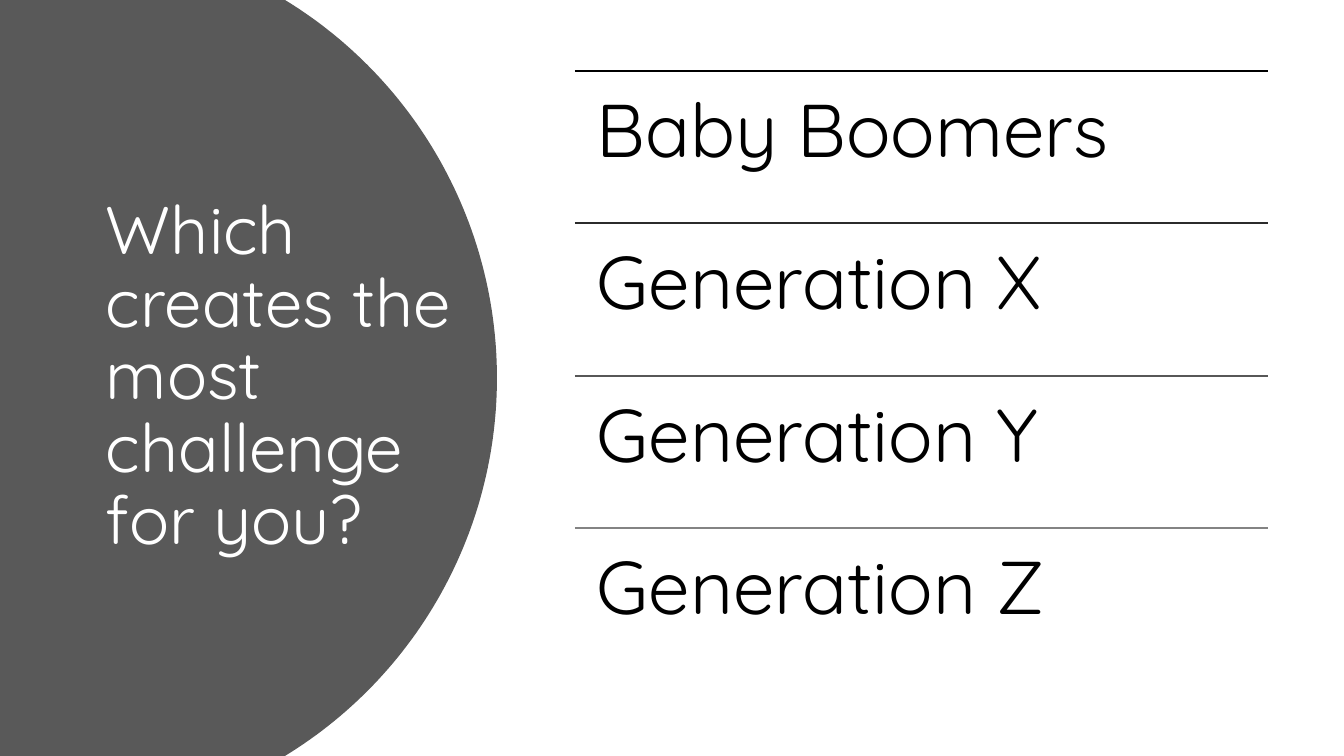
"""Build the slide that asks which generation creates the most challenge."""
from dataclasses import dataclass
from math import asin, cos, sin

from lxml import etree
from pptx import Presentation
from pptx.dml.color import RGBColor
from pptx.enum.shapes import MSO_CONNECTOR
from pptx.enum.text import MSO_ANCHOR, PP_ALIGN
from pptx.oxml.ns import qn
from pptx.slide import Slide
from pptx.util import Emu, Pt

STRAIGHT = MSO_CONNECTOR.STRAIGHT
MIDDLE, TOP = MSO_ANCHOR.MIDDLE, MSO_ANCHOR.TOP
LEFT = PP_ALIGN.LEFT

EMU_PER_PX = 914400 / 100.8
SLIDE_WIDTH, SLIDE_HEIGHT = 1344, 756
ARC_EDGE, ARC_TIP, ARC_STEPS = 285, 497, 120
ROWS_LEFT, ROWS_TOP, ROWS_WIDTH, ROWS_HEIGHT = 575, 71, 693, 610


@dataclass(frozen=True)
class Theme:
    font: str = "Quicksand"
    panel: str = "595959"
    question: str = "FFFFFF"
    answer: str = "000000"
    question_size: float = 48
    answer_size: float = 53.3
    rule_width: float = 1.5
    line_spacing: float = 0.9


@dataclass(frozen=True)
class TextBlock:
    text: str
    left: int
    top: int
    width: int
    height: int
    inset_x: int
    inset_y: int
    size: float
    color: str
    anchor: MSO_ANCHOR


@dataclass(frozen=True)
class Generation:
    name: str
    rule_color: str


THEME = Theme()
GENERATIONS = (
    Generation("Baby Boomers", "000000"),
    Generation("Generation X", "2B2B2B"),
    Generation("Generation Y", "575757"),
    Generation("Generation Z", "838383"),
)
QUESTION = TextBlock("Which creates the most challenge for you?", 93, 71, 374, 614,
                     13, 7, THEME.question_size, THEME.question, MIDDLE)


def px(length: float) -> Emu:
    return Emu(round(length * EMU_PER_PX))


def draw_panel(slide: Slide) -> None:
    half_height = SLIDE_HEIGHT / 2
    sagitta = ARC_TIP - ARC_EDGE
    radius = (half_height ** 2 + sagitta ** 2) / (2 * sagitta)
    center_x = ARC_TIP - radius
    half_angle = asin(half_height / radius)
    angles = [half_angle * (2 * step / ARC_STEPS - 1) for step in range(ARC_STEPS + 1)]
    arc = [(px(center_x + radius * cos(angle)), px(half_height + radius * sin(angle)))
           for angle in angles]
    outline = slide.shapes.build_freeform(0, 0)
    outline.add_line_segments([*arc, (0, px(SLIDE_HEIGHT))], close=True)
    panel = outline.convert_to_shape()
    panel.shadow.inherit = False
    panel.fill.solid()
    panel.fill.fore_color.rgb = RGBColor.from_string(THEME.panel)
    panel.line.fill.background()


def draw_text(slide: Slide, block: TextBlock) -> None:
    box = slide.shapes.add_textbox(px(block.left), px(block.top),
                                   px(block.width), px(block.height))
    frame = box.text_frame
    frame.word_wrap = True
    frame.vertical_anchor = block.anchor
    frame.margin_left = frame.margin_right = px(block.inset_x)
    frame.margin_top = frame.margin_bottom = px(block.inset_y)
    frame.text = block.text
    paragraph = frame.paragraphs[0]
    paragraph.alignment = LEFT
    paragraph.line_spacing = THEME.line_spacing
    font = paragraph.runs[0].font
    font.name = THEME.font
    font.size = Pt(block.size)
    font.color.rgb = RGBColor.from_string(block.color)


def draw_rule(slide: Slide, top: int, color: str) -> None:
    rule = slide.shapes.add_connector(STRAIGHT, px(ROWS_LEFT), px(top),
                                      px(ROWS_LEFT + ROWS_WIDTH), px(top))
    rule.line.width = Pt(THEME.rule_width)
    rule.line.color.rgb = RGBColor.from_string(color)
    etree.SubElement(rule._element.spPr, qn("a:effectLst"))


def draw_generations(slide: Slide) -> None:
    for index, generation in enumerate(GENERATIONS):
        top = ROWS_TOP + index * ROWS_HEIGHT // len(GENERATIONS)
        draw_rule(slide, top, generation.rule_color)
        draw_text(slide, TextBlock(generation.name, ROWS_LEFT, top, ROWS_WIDTH,
                                   ROWS_HEIGHT // len(GENERATIONS), 22, 22,
                                   THEME.answer_size, THEME.answer, TOP))


def main() -> None:
    deck = Presentation()
    deck.slide_width, deck.slide_height = px(SLIDE_WIDTH), px(SLIDE_HEIGHT)
    slide = deck.slides.add_slide(deck.slide_layouts[6])
    draw_panel(slide)
    draw_text(slide, QUESTION)
    draw_generations(slide)
    deck.save("out.pptx")


if __name__ == "__main__":
    main()
